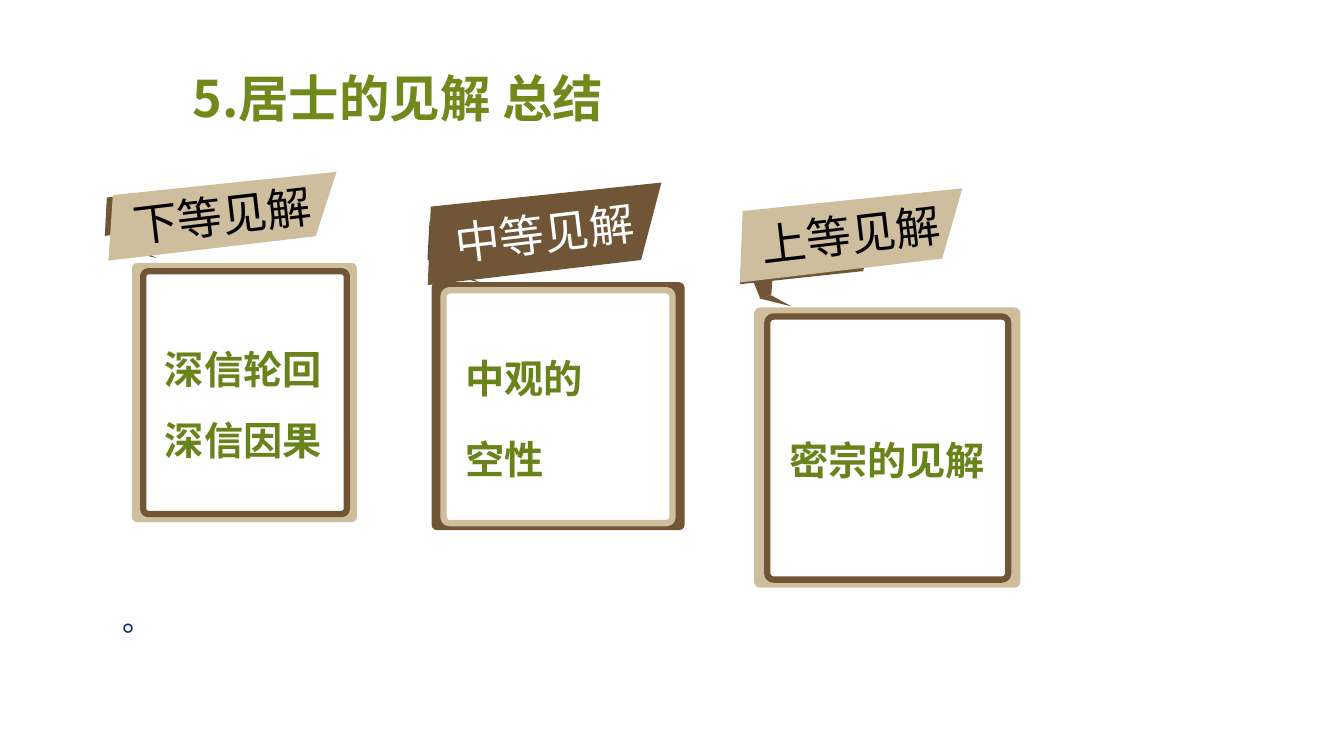
from lxml import etree
from pptx import Presentation, util as u
from pptx.dml.color import RGBColor
from pptx.enum import shapes, text
from pptx.oxml.ns import qn

# Content: frame, panel and banner are (left, top, width, height); fold is an origin
CARDS = [
    {"label": "下等见解", "lines": ["深信轮回", "深信因果"], "gap": 0,
     "frame": (131, 261, 223, 257), "panel": (142, 269, 202, 241),
     "banner": (103, 181, 235, 64), "fold": (104, 184),
     "colours": ("sand", "brown", "brown", "sand", "black")},
    {"label": "中等见解", "lines": ["中观的", "空性"], "gap": 7,
     "frame": (428, 280, 251, 246), "panel": (440, 288, 227, 231),
     "banner": (419, 192, 242, 77), "fold": (424, 208),
     "colours": ("brown", "sand", "shade", "brown", "white")},
    {"label": "上等见解", "lines": ["密宗的见解"], "gap": 0,
     "frame": (748, 305, 264, 278), "panel": (761, 314, 239, 261),
     "banner": (729, 197, 230, 70), "fold": (734, 232),
     "colours": ("sand", "brown", "brown", "sand", "black")},
]
TITLE = ("5.居士的见解 总结", (181, 27, 975, 140))
CLOSING = ("。", (112, 591, 940, 47))

COLOURS = {"sand": "CFBE9D", "brown": "715537", "shade": "514A43",
           "white": "FFFFFF", "black": "000000", "leaf": "67841A",
           "olive": "6F8A1B", "navy": "002060"}
CJK = "Noto Sans CJK SC"
FORMATS = {
    "title": {"name": CJK, "size": u.Pt(36), "bold": True},
    "panel": {"name": CJK, "size": u.Pt(28), "bold": True},
    "banner": {"name": "Arial", "size": u.Pt(32), "bold": False},
    "closing": {"name": CJK, "size": u.Pt(22), "bold": False},
}

# Ribbon pieces, measured from the fold origin
RIBBON = [
    [(31, 61), (51, 72), (19, 64)],
    [(9, 37), (20, 64), (31, 61), (33, 34)],
    [(2, 12), (134, 0), (122, 37), (0, 50)],
]
# Banner corners as shares of its width and height
BANNER = [(0.05, 0), (1, 0.04), (0.88, 1), (0, 1)]
BANNER_TILT = -6.7

PX = 9144  # one hundredth of an inch


def emu(lengths):
    return [length * PX for length in lengths]


def rgb(name):
    return RGBColor.from_string(COLOURS[name])


def paint(shape, fill, line=None):
    shape.shadow.inherit = False
    shape.fill.solid()
    shape.fill.fore_color.rgb = rgb(fill)
    if line:
        shape.line.color.rgb = rgb(line)
        shape.line.width = u.Pt(4.5)
    else:
        shape.line.fill.background()


def write(shape, lines, style, colour, layout, margins=(10, 5, 10, 5)):
    frame = shape.text_frame
    frame.word_wrap = True
    for side, margin in zip(("left", "top", "right", "bottom"), emu(margins)):
        setattr(frame, "margin_" + side, margin)
    frame.vertical_anchor = layout["anchor"]
    for index, line in enumerate(lines):
        para = frame.add_paragraph() if index else frame.paragraphs[0]
        para.alignment = layout["align"]
        para.line_spacing = layout.get("spacing", 1.0)
        if index:
            para.space_before = u.Pt(layout["gap"])
        span = para.add_run()
        span.text = line
        for key, value in FORMATS[style].items():
            setattr(span.font, key, value)
        span.font.color.rgb = rgb(colour)
        etree.SubElement(span.font._element, qn("a:ea"), typeface=CJK)


def add_box(parent, place, corner, fill, line=None):
    box = parent.add_shape(shapes.MSO_SHAPE.ROUNDED_RECTANGLE, *emu(place))
    box.adjustments[0] = corner
    paint(box, fill, line)
    return box


def add_outline(parent, points, fill):
    builder = parent.build_freeform(*points[0], scale=PX)
    builder.add_line_segments(points[1:], close=True)
    outline = builder.convert_to_shape()
    paint(outline, fill)
    return outline


def add_card(page, card):
    frame, edge, ribbon, banner_fill, label = card["colours"]
    # Framed panel
    parts = page.shapes.add_group_shape().shapes
    add_box(parts, card["frame"], 0.022, frame)
    panel = add_box(parts, card["panel"], 0.026, "white", edge)
    write(panel, card["lines"], "panel", "leaf",
          {"anchor": text.MSO_ANCHOR.MIDDLE, "align": text.PP_ALIGN.LEFT,
           "spacing": 1.5, "gap": card["gap"]}, (20, 10, 20, 10))
    # Folded ribbon and tilted banner
    parts = page.shapes.add_group_shape().shapes
    left, top = card["fold"]
    for piece in RIBBON:
        add_outline(parts, [(left + x, top + y) for x, y in piece], ribbon)
    left, top, width, height = card["banner"]
    corners = [(round(left + x * width), round(top + y * height))
               for x, y in BANNER]
    banner = add_outline(parts, corners, banner_fill)
    banner.rotation = BANNER_TILT
    write(banner, [card["label"]], "banner", label,
          {"anchor": text.MSO_ANCHOR.MIDDLE, "align": text.PP_ALIGN.CENTER},
          (0, 0, 0, 0))


def main():
    deck = Presentation()
    deck.slide_width, deck.slide_height = emu((1333, 750))
    page = deck.slides.add_slide(deck.slide_layouts[6])
    for card in CARDS:
        add_card(page, card)

    # Title and closing mark
    for (words, place), style, colour, anchor in (
            (TITLE, "title", "olive", text.MSO_ANCHOR.MIDDLE),
            (CLOSING, "closing", "navy", text.MSO_ANCHOR.TOP)):
        box = page.shapes.add_textbox(*emu(place))
        write(box, [words], style, colour,
              {"anchor": anchor, "align": text.PP_ALIGN.LEFT})
    deck.save("out.pptx")


if __name__ == "__main__":
    main()
